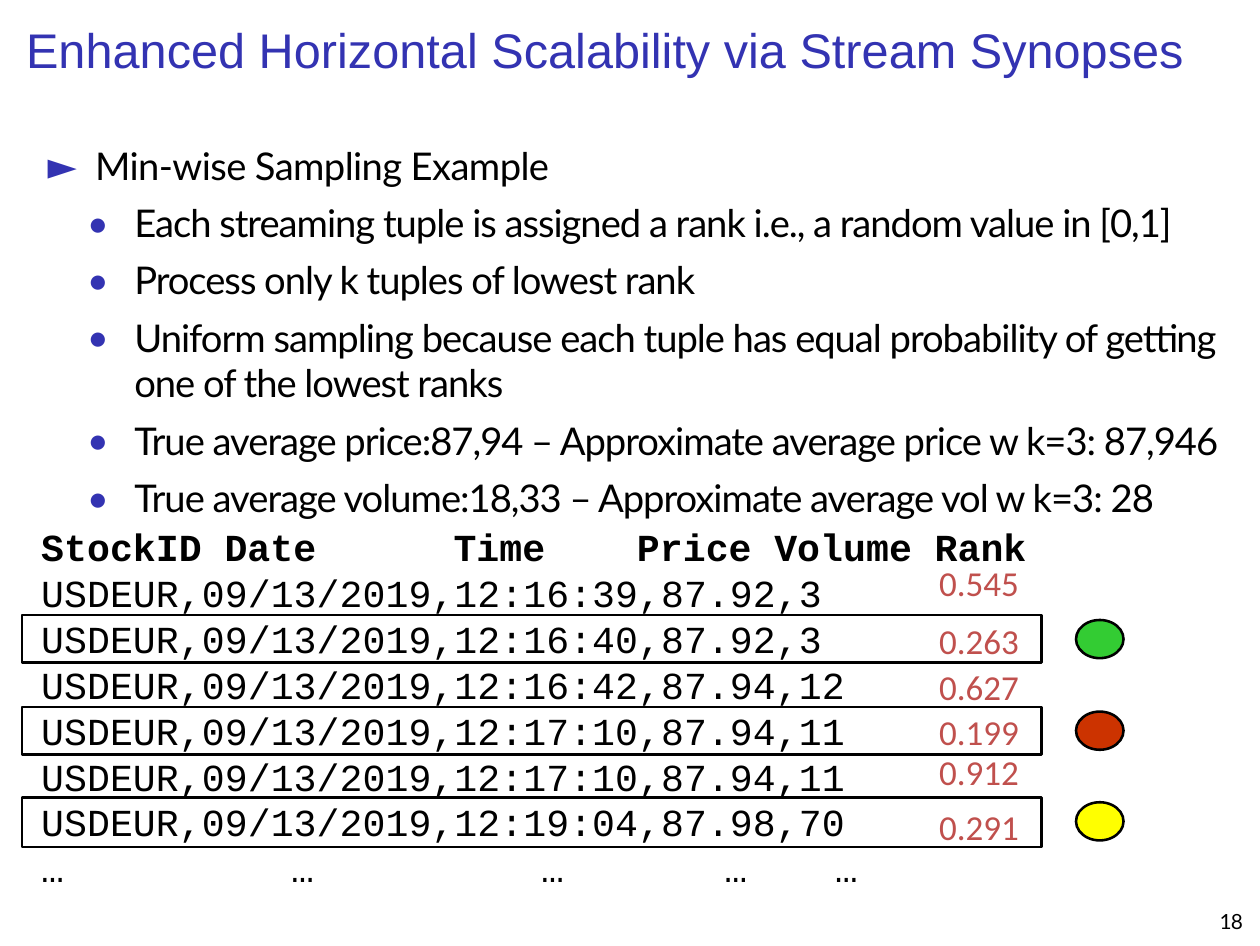
from lxml.etree import SubElement
from pptx import Presentation
from pptx.dml.color import RGBColor
from pptx.enum.shapes import MSO_SHAPE
from pptx.enum.text import MSO_ANCHOR, PP_ALIGN
from pptx.oxml.ns import qn
from pptx.util import Pt

BLUE, BLACK, RED = "3333B2", "000000", "C0504D"

BULLETS = [
    "Each streaming tuple is assigned a rank i.e., a random value in [0,1]",
    "Process only k tuples of lowest rank",
    "Uniform sampling because each tuple has equal probability of getting one of the lowest ranks",
    "True average price:87,94 – Approximate average price w k=3: 87,946",
    "True average volume:18,33 – Approximate average vol w k=3: 28",
]
HEADER = ["StockID", "Date", "Time", "Price", "Volume", "Rank"]
HEADER_TABS = [52.8, 118.8, 171.6, 211.2, 257.4]
TUPLES = [
    "USDEUR,09/13/2019,12:16:39,87.92,3",
    "USDEUR,09/13/2019,12:16:40,87.92,3",
    "USDEUR,09/13/2019,12:16:42,87.94,12",
    "USDEUR,09/13/2019,12:17:10,87.94,11",
    "USDEUR,09/13/2019,12:17:10,87.94,11",
    "USDEUR,09/13/2019,12:19:04,87.98,70",
]
ELLIPSIS_TABS = [72, 144, 196.8, 228.6]
RANKS = [("0.545", 158.2), ("0.263", 175), ("0.627", 188.1),
         ("0.199", 201), ("0.912", 212.7), ("0.291", 228.4)]
SAMPLES = [(177.2, 13.7, "33CC33"), (203.6, 13.7, "CC3300"), (229.7, 14.4, "FFFF00")]


def rgb(value):
    return RGBColor.from_string(value)


def add_run(p, text, font, size, color, bold=False, spacing=0):
    r = p.add_run()
    r.text = text
    r.font.name = font
    r.font.size = Pt(size)
    r.font.bold = bold
    r.font.color.rgb = rgb(color)
    if spacing:
        r.font._element.set("spc", str(round(spacing * 100)))


def set_insets(tf, left, top, right, bottom):
    tf.margin_left, tf.margin_top = Pt(left), Pt(top)
    tf.margin_right, tf.margin_bottom = Pt(right), Pt(bottom)


def add_text_box(s, x, y, w, h, insets=(7.2, 3.6, 7.2, 3.6)):
    tf = s.shapes.add_textbox(Pt(x), Pt(y), Pt(w), Pt(h)).text_frame
    tf.word_wrap = True
    set_insets(tf, *insets)
    return tf


def next_paragraph(tf, first):
    return tf.paragraphs[0] if first else tf.add_paragraph()


def set_bullet(p, char, margin, indent):
    pPr = p._p.get_or_add_pPr()
    pPr.set("marL", str(Pt(margin)))
    pPr.set("indent", str(Pt(indent)))
    SubElement(SubElement(pPr, qn("a:buClr")), qn("a:srgbClr"), val=BLUE)
    SubElement(pPr, qn("a:buFont"), typeface="Lato")
    SubElement(pPr, qn("a:buChar"), char=char)


def set_tabs(p, stops):
    tab_list = SubElement(p._p.get_or_add_pPr(), qn("a:tabLst"))
    for stop in stops:
        SubElement(tab_list, qn("a:tab"), pos=str(Pt(stop)), algn="l")


def add_outline(s, kind, x, y, w, h, fill=None):
    sp = s.shapes.add_shape(kind, Pt(x), Pt(y), Pt(w), Pt(h))
    sp.shadow.inherit = False
    sp.line.color.rgb = rgb(BLACK)
    sp.line.width = Pt(0.75)
    if fill:
        sp.fill.solid()
        sp.fill.fore_color.rgb = rgb(fill)
    else:
        sp.fill.background()


def add_title(s, text):
    title = s.shapes.title
    title.left, title.top, title.width, title.height = Pt(7.5), Pt(5.8), Pt(342), Pt(33.8)
    tf = title.text_frame
    tf.word_wrap = True
    tf.vertical_anchor = MSO_ANCHOR.TOP
    set_insets(tf, 0, 0, 0, 0)
    p = tf.paragraphs[0]
    p.alignment = PP_ALIGN.LEFT
    add_run(p, text, "Arial", 14, BLUE)


def add_bullets(s, heading, items):
    tf = add_text_box(s, 10.8, 36.6, 350, 130.3, (0, 4.3, 0, 0))
    p = tf.paragraphs[0]
    set_bullet(p, "►", 16.6, -13.7)
    add_run(p, heading, "Lato", 11, BLACK, spacing=-0.2)
    for item in items:
        p = tf.add_paragraph()
        p.level = 1
        set_bullet(p, "•", 27.9, -13.7)
        p.space_before = Pt(3.3)
        add_run(p, item, "Lato", 11, BLACK, spacing=-0.3)


def add_stream(s):
    tf = add_text_box(s, 4.8, 147.3, 301.7, 112.8)
    rows = [("\t".join(HEADER), HEADER_TABS)]
    rows += [(row, None) for row in TUPLES]
    rows.append(("\t".join("…" * 5), ELLIPSIS_TABS))
    for i, (text, stops) in enumerate(rows):
        p = next_paragraph(tf, i == 0)
        if stops:
            set_tabs(p, stops)
        p.line_spacing = Pt(13.2)
        add_run(p, text, "Courier New", 11, BLACK, bold=i == 0)


def add_rank(s, rank, y):
    tf = add_text_box(s, 263.5, y, 66.2, 19.4)
    add_run(tf.paragraphs[0], rank, "Calibri", 10.1, RED)


def add_sample(s, y, h, color):
    add_outline(s, MSO_SHAPE.RECTANGLE, 6.3, y, 293.8, h)
    add_outline(s, MSO_SHAPE.OVAL, 310, y + 1.4, 13.7, 11, color)


def add_page_number(s, number):
    p = add_text_box(s, 348.5, 262.1, 15.8, 7.2, (2.9, 0, 0, 0)).paragraphs[0]
    p.line_spacing = Pt(6.8)
    add_run(p, number, "Lato", 6, BLACK, spacing=-0.2)


def main():
    prs = Presentation()
    prs.slide_width = Pt(363)
    prs.slide_height = Pt(272.5)
    s = prs.slides.add_slide(prs.slide_layouts[5])
    add_title(s, "Enhanced Horizontal Scalability via Stream Synopses")
    add_bullets(s, "Min-wise Sampling Example", BULLETS)
    add_stream(s)
    for rank, y in RANKS:
        add_rank(s, rank, y)
    for y, h, color in SAMPLES:
        add_sample(s, y, h, color)
    add_page_number(s, "18")
    prs.save("out.pptx")


if __name__ == "__main__":
    main()
